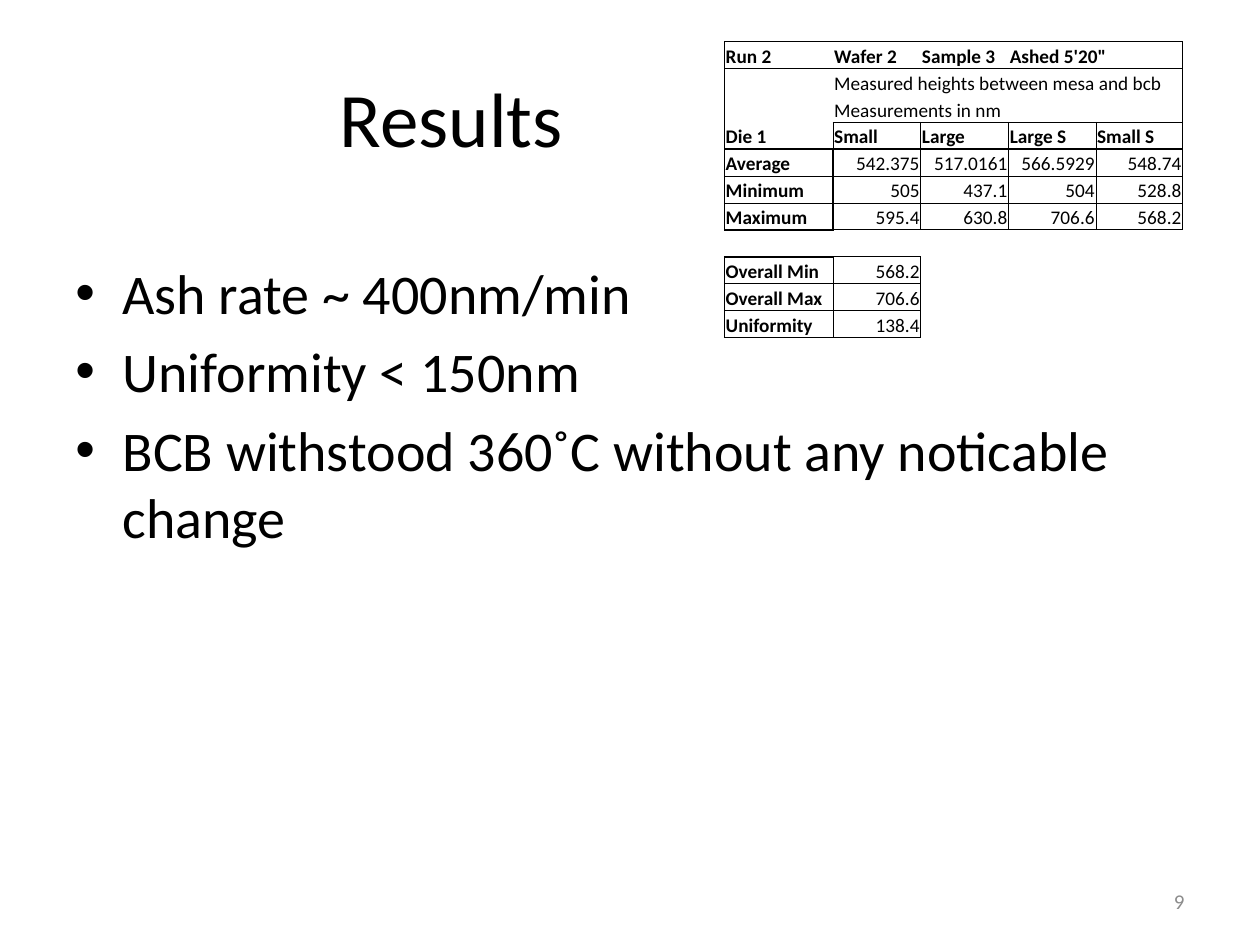
"""Build the Results slide with its bullet list and measurement table."""
from dataclasses import dataclass

from lxml.etree import SubElement
from pptx import Presentation
from pptx.dml.color import RGBColor
from pptx.enum.text import MSO_ANCHOR, PP_ALIGN
from pptx.oxml.ns import qn
from pptx.slide import Slide
from pptx.table import _Cell
from pptx.util import Pt


@dataclass(frozen=True)
class Theme:
    font: str = "Calibri"
    ink: str = "000000"
    muted: str = "8C8C8C"
    title: float = 44
    body: float = 32
    number: float = 12
    table: float = 11
    thin: float = 0.5
    thick: float = 1


@dataclass(frozen=True)
class TextBlock:
    lines: tuple[str, ...]
    left: float
    top: float
    width: float
    height: float
    size: float
    color: str
    align: PP_ALIGN = PP_ALIGN.LEFT
    anchor: MSO_ANCHOR = MSO_ANCHOR.MIDDLE
    bullet: str = ""


@dataclass(frozen=True)
class Entry:
    """A table cell; edges name its sides, with capitals for thick lines."""
    text: str = ""
    edges: str = ""
    bold: bool = False
    align: PP_ALIGN = PP_ALIGN.LEFT
    span: int = 1


THEME = Theme()
TABLE_LEFT, TABLE_TOP, ROW_HEIGHT = 414, 23.8, 15.38
COLUMN_WIDTHS = (62, 50.2, 50.2, 49.9, 49.6)

BLOCKS = (
    TextBlock(("Results",), 36, 21.6, 444, 90, THEME.title, THEME.ink, PP_ALIGN.CENTER),
    TextBlock(
        ("Ash rate ~ 400nm/min", "Uniformity < 150nm",
         "BCB withstood 360˚C without any noticable change"),
        36, 144, 648, 338.4, THEME.body, THEME.ink, anchor=MSO_ANCHOR.TOP, bullet="•"),
    TextBlock(("9",), 516, 500.4, 168, 28.8, THEME.number, THEME.muted, PP_ALIGN.RIGHT),
)


def label(text: str, edges: str, span: int = 1) -> Entry:
    return Entry(text, edges, bold=True, span=span)


def value(text: str, edges: str) -> Entry:
    return Entry(text, edges, align=PP_ALIGN.RIGHT)


def measured(name: str, values: tuple[str, ...], top: str, bottom: str) -> tuple[Entry, ...]:
    sides = ("Lr", "lr", "lr", "lR")
    numbers = (value(text, side + top + "b") for text, side in zip(values, sides))
    return (label(name, "LR" + top + bottom), *numbers)


def overall(name: str, number: str, top: str, bottom: str) -> tuple[Entry, ...]:
    return (label(name, "Lr" + top + bottom), value(number, "ltrb"), Entry(edges="l"))


ROWS = (
    (label("Run 2", "ltb"), label("Wafer 2", "tb"), label("Sample 3", "tb"),
     label("Ashed 5'20\"", "trb", 2)),
    (Entry(edges="lt"), Entry("Measured heights between mesa and bcb", "tr", span=4)),
    (Entry(edges="l"), Entry("Measurements in nm", "b", span=3), Entry(edges="rb")),
    (label("Die 1", "lrB"), *(label(name, "ltrB") for name in ("Small", "Large", "Large S")),
     label("Small S", "ltRB")),
    measured("Average", ("542.375", "517.0161", "566.5929", "548.74"), "T", "b"),
    measured("Minimum", ("505", "437.1", "504", "528.8"), "t", "b"),
    measured("Maximum", ("595.4", "630.8", "706.6", "568.2"), "t", "B"),
    (Entry(edges="TB"), Entry(edges="tb"), *[Entry(edges="t")] * 3),
    overall("Overall Min", "568.2", "T", "b"),
    overall("Overall Max", "706.6", "t", "b"),
    overall("Uniformity", "138.4", "t", "B"),
)


def add_span(para, text: str, size: float, color: str, bold: bool = False) -> None:
    span = para.add_run()
    span.text = text
    span.font.name = THEME.font
    span.font.size = Pt(size)
    span.font.bold = bold
    span.font.color.rgb = RGBColor.from_string(color)


def add_bullet(para, symbol: str) -> None:
    para.space_before = Pt(6.4)
    properties = para._p.get_or_add_pPr()
    properties.set("marL", str(Pt(27)))
    properties.set("indent", str(Pt(-27)))
    SubElement(properties, qn("a:buFont"), typeface="Arial")
    SubElement(properties, qn("a:buChar"), char=symbol)


def draw_block(page: Slide, block: TextBlock) -> None:
    box = page.shapes.add_textbox(
        Pt(block.left), Pt(block.top), Pt(block.width), Pt(block.height))
    frame = box.text_frame
    frame.word_wrap = True
    frame.vertical_anchor = block.anchor
    for index, line in enumerate(block.lines):
        para = frame.add_paragraph() if index else frame.paragraphs[0]
        para.alignment = block.align
        if block.bullet:
            add_bullet(para, block.bullet)
        add_span(para, line, block.size, block.color)


def draw_edges(cell: _Cell, edges: str) -> None:
    properties = cell._tc.get_or_add_tcPr()
    for side in "LRTB":
        width = THEME.thick if side in edges else THEME.thin
        line = SubElement(properties, qn(f"a:ln{side}"), w=str(Pt(width)))
        if side in edges.upper():
            fill = SubElement(line, qn("a:solidFill"))
            SubElement(fill, qn("a:srgbClr"), val=THEME.ink)
        else:
            SubElement(line, qn("a:noFill"))


def draw_cell(cell: _Cell, entry: Entry) -> None:
    cell.margin_left = cell.margin_right = cell.margin_top = Pt(0.7)
    cell.margin_bottom = Pt(0)
    cell.vertical_anchor = MSO_ANCHOR.BOTTOM
    draw_edges(cell, entry.edges)
    cell.fill.background()
    para = cell.text_frame.paragraphs[0]
    para.alignment = entry.align
    if entry.text:
        add_span(para, entry.text, THEME.table, THEME.ink, entry.bold)
    else:
        SubElement(para._p, qn("a:endParaRPr"), sz=str(int(THEME.table * 100)))


def draw_table(page: Slide, rows: tuple[tuple[Entry, ...], ...]) -> None:
    table = page.shapes.add_table(
        len(rows), len(COLUMN_WIDTHS), Pt(TABLE_LEFT), Pt(TABLE_TOP),
        Pt(sum(COLUMN_WIDTHS)), Pt(ROW_HEIGHT * len(rows))).table
    table.first_row = table.horz_banding = False
    for column, width in zip(table.columns, COLUMN_WIDTHS):
        column.width = Pt(width)
    for row_index, entries in enumerate(rows):
        table.rows[row_index].height = Pt(ROW_HEIGHT)
        column_index = 0
        for entry in entries:
            cell = table.cell(row_index, column_index)
            draw_cell(cell, entry)
            last = column_index + entry.span - 1
            for covered in range(column_index + 1, last + 1):
                draw_cell(table.cell(row_index, covered), Entry(edges=entry.edges))
            if entry.span > 1:
                cell.merge(table.cell(row_index, last))
            column_index = last + 1
        for rest in range(column_index, len(COLUMN_WIDTHS)):
            draw_cell(table.cell(row_index, rest), Entry())


def main() -> None:
    deck = Presentation()
    deck.slide_width, deck.slide_height = Pt(720), Pt(540)
    page = deck.slides.add_slide(deck.slide_layouts[6])
    for block in BLOCKS:
        draw_block(page, block)
    draw_table(page, ROWS)
    deck.save("out.pptx")


if __name__ == "__main__":
    main()
